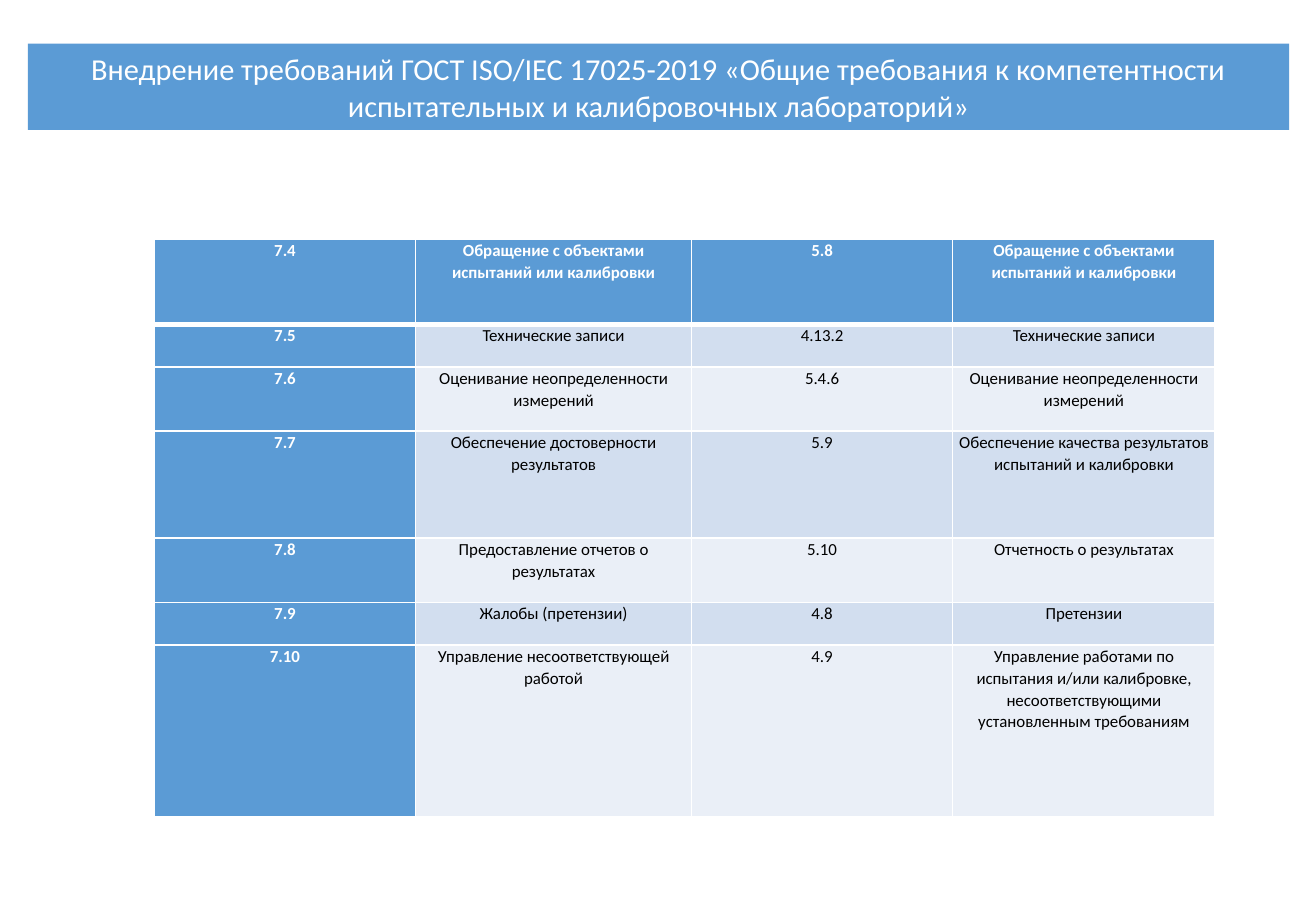
from lxml.etree import SubElement
from pptx import Presentation
from pptx.dml.color import RGBColor
from pptx.enum.text import MSO_ANCHOR, MSO_AUTO_SIZE, PP_ALIGN
from pptx.oxml.ns import qn
from pptx.util import Inches, Pt

BLUE, WHITE, BLACK = "5B9BD5", "FFFFFF", "000000"
BANDS = ["EAEFF7", "D2DEEF"]


def write_text(frame, text, size, color, bold=False, spacing=1.0):
    para = frame.paragraphs[0]
    para.alignment = PP_ALIGN.CENTER
    para.line_spacing = spacing
    span = para.add_run()
    span.text = text
    span.font.name = "Calibri"
    span.font.size = Pt(size)
    span.font.bold = bold
    span.font.color.rgb = RGBColor.from_string(color)


def paint_cell(cell, fill, borders):
    properties = cell._tc.get_or_add_tcPr()
    for side, width in borders.items():
        line = SubElement(properties, qn(f"a:ln{side}"), w=str(Pt(width)))
        solid = SubElement(line, qn("a:solidFill"))
        SubElement(solid, qn("a:srgbClr"), val=WHITE)
    cell.fill.solid()
    cell.fill.fore_color.rgb = RGBColor.from_string(fill)


deck = Presentation()
deck.slide_width, deck.slide_height = Inches(10.83), Inches(7.5)
page = deck.slides.add_slide(deck.slide_layouts[5])

title = page.shapes.title
title.left, title.top = Inches(0.23), Inches(0.36)
title.width, title.height = Inches(10.38), Inches(0.71)
title.fill.solid()
title.fill.fore_color.rgb = RGBColor.from_string(BLUE)
title.text_frame.word_wrap = True
title.text_frame.auto_size = MSO_AUTO_SIZE.NONE
title.text_frame.vertical_anchor = MSO_ANCHOR.MIDDLE
write_text(
    title.text_frame,
    "Внедрение требований ГОСТ ISO/IEC 17025-2019 «Общие требования к компетентности "
    "испытательных и калибровочных лабораторий»",
    size=18,
    color=WHITE,
)

clauses = [
    ("7.4", "Обращение с объектами испытаний или калибровки",
     "5.8", "Обращение с объектами испытаний и калибровки"),
    ("7.5", "Технические записи", "4.13.2", "Технические записи"),
    ("7.6", "Оценивание неопределенности измерений",
     "5.4.6", "Оценивание неопределенности измерений"),
    ("7.7", "Обеспечение достоверности результатов",
     "5.9", "Обеспечение качества результатов испытаний и калибровки"),
    ("7.8", "Предоставление отчетов о результатах", "5.10", "Отчетность о результатах"),
    ("7.9", "Жалобы (претензии)", "4.8", "Претензии"),
    ("7.10", "Управление несоответствующей работой", "4.9",
     "Управление работами по испытания и/или калибровке, "
     "несоответствующими установленным требованиям"),
]
widths = [2.15, 2.27, 2.15, 2.16]
heights = [0.7, 0.35, 0.53, 0.88, 0.53, 0.35, 1.41]

table = page.shapes.add_table(
    len(heights), len(widths), Inches(1.27), Inches(1.97),
    Inches(sum(widths)), Inches(sum(heights)),
).table
table.first_col = True
for column, width in zip(table.columns, widths):
    column.width = Inches(width)

for row_index, (clause, height) in enumerate(zip(clauses, heights)):
    table.rows[row_index].height = Inches(height)
    borders = {
        "L": 1,
        "R": 1,
        "T": 3 if row_index == 1 else 1,
        "B": 3 if row_index == 0 else 1,
    }
    for column_index, text in enumerate(clause):
        cell = table.cell(row_index, column_index)
        heading = row_index == 0 or column_index == 0
        cell.margin_left = cell.margin_right = Inches(0.05)
        cell.margin_top = cell.margin_bottom = 0
        paint_cell(cell, BLUE if heading else BANDS[row_index % 2], borders)
        write_text(
            cell.text_frame,
            text,
            size=10,
            color=WHITE if heading else BLACK,
            bold=heading,
            spacing=1.07,
        )

deck.save("out.pptx")
